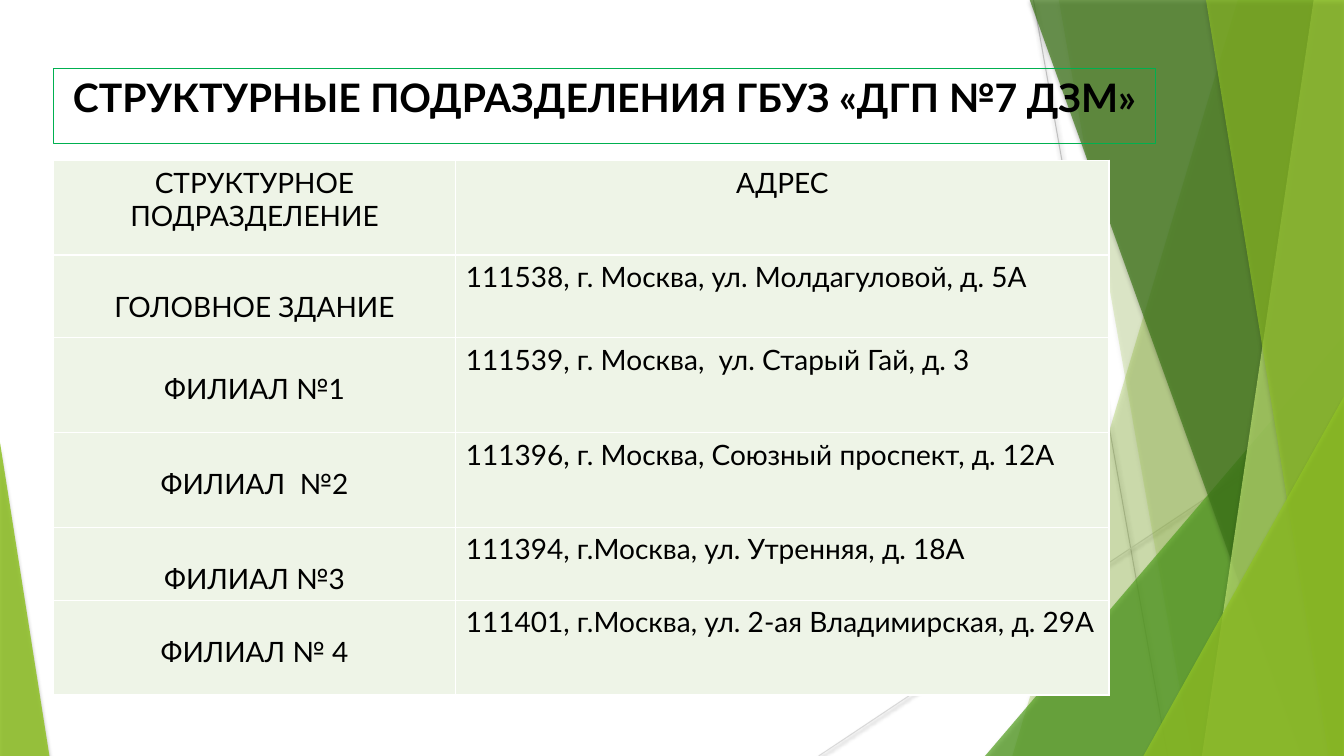
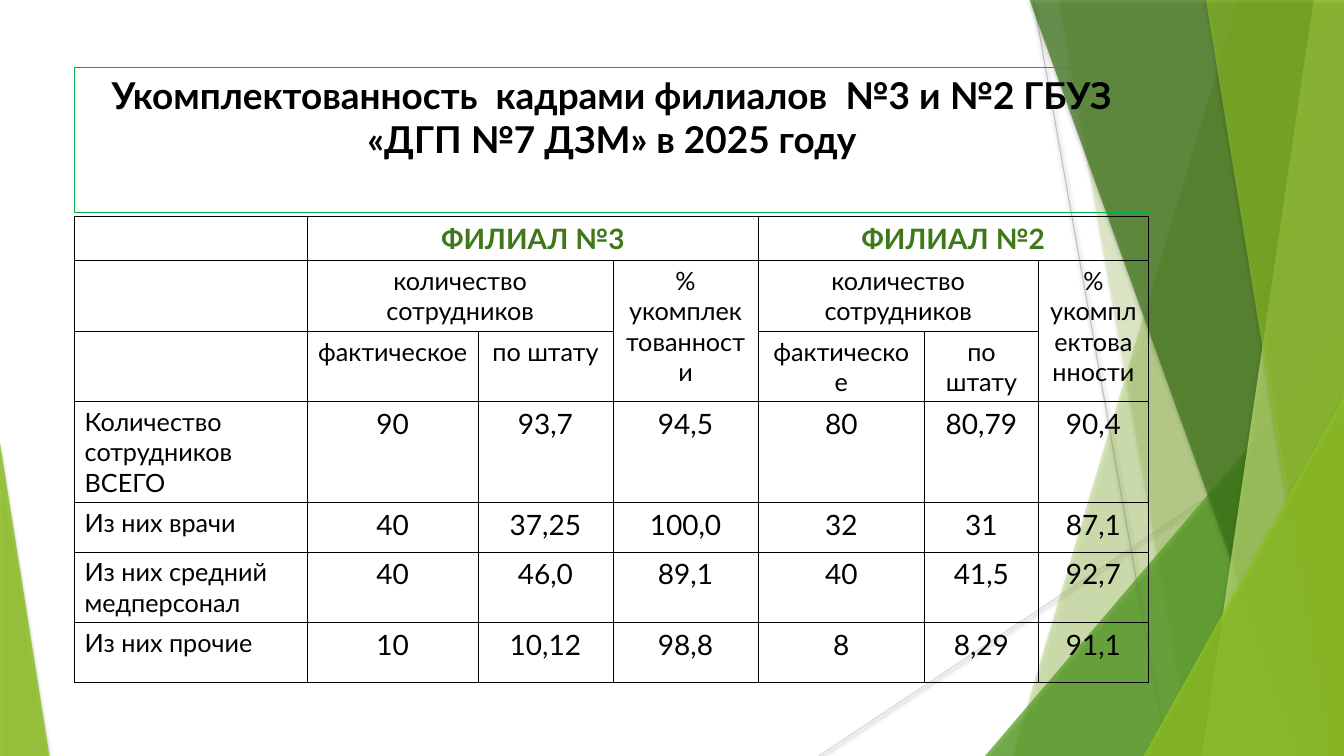
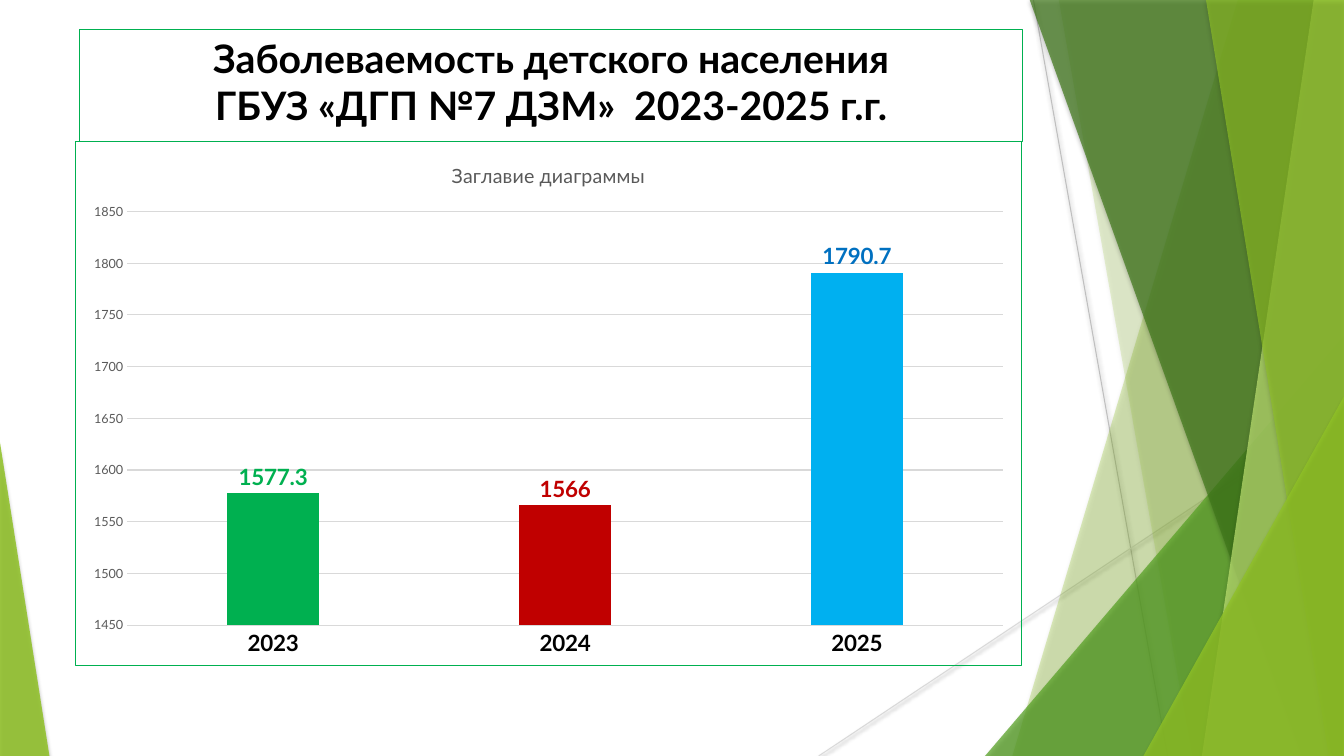
"""Build three slides about a children's clinic: branches, staffing and illness rates."""
from dataclasses import dataclass
from typing import Any, Callable, NamedTuple

from lxml import etree
from pptx import Presentation
from pptx.chart.data import CategoryChartData
from pptx.dml.color import RGBColor
from pptx.enum.chart import XL_CHART_TYPE, XL_LABEL_POSITION, XL_TICK_MARK
from pptx.enum.shapes import MSO_CONNECTOR, MSO_SHAPE
from pptx.enum.text import MSO_ANCHOR, PP_ALIGN
from pptx.oxml.ns import qn
from pptx.util import Inches, Pt

COLUMN = XL_CHART_TYPE.COLUMN_CLUSTERED
ABOVE = XL_LABEL_POSITION.OUTSIDE_END
NO_TICK = XL_TICK_MARK.NONE
STRAIGHT = MSO_CONNECTOR.STRAIGHT
RECT = MSO_SHAPE.RECTANGLE
TRIANGLE = MSO_SHAPE.ISOSCELES_TRIANGLE
TOP = MSO_ANCHOR.TOP
CENTER = PP_ALIGN.CENTER
LEFT = PP_ALIGN.LEFT


@dataclass(frozen=True)
class Theme:
    """Hold the colours, type sizes and font of the deck."""
    font: str = "Lato"
    black: str = "000000"
    white: str = "FFFFFF"
    gray: str = "595959"
    rule: str = "D9D9D9"
    ray: str = "BFBFBF"
    frame: str = "00B050"
    red: str = "C00000"
    sky: str = "00B0F0"
    blue: str = "0070C0"
    lime: str = "90C226"
    pale: str = "C0E474"
    green: str = "54A021"
    forest: str = "3F7819"
    mint: str = "EEF4E7"
    title: float = 28
    tight: float = 26.4
    body: float = 20
    small: float = 18
    label: float = 16
    legend: float = 14
    tick: float = 9


THEME = Theme()
WIDE, HIGH, EDGE = 13.33, 7.5, -0.01


class Box(NamedTuple):
    """Place a shape, in inches."""
    left: float
    top: float
    width: float
    height: float


class Ray(NamedTuple):
    """Describe a thin line of the backdrop."""
    start: tuple[float, float]
    end: tuple[float, float]
    color: str


class Band(NamedTuple):
    """Describe a full-height band that reaches the right edge."""
    upper: float
    lower: float
    color: str
    alpha: int


class Wedge(NamedTuple):
    """Describe a corner triangle; peak is 0 for left and 1 for right."""
    box: Box
    peak: float
    color: str
    alpha: int


class Look(NamedTuple):
    """Describe the text of one table cell."""
    size: float = THEME.body
    color: str = THEME.black
    bold: bool = False
    align: Any = CENTER
    inset: float = 0.05


class Bar(NamedTuple):
    """Describe one column of the chart."""
    year: str
    value: float
    fill: str
    text: str


@dataclass(frozen=True)
class Grid:
    """Describe a table and the rule for its cells."""
    box: Box
    cols: tuple[float, ...]
    rows: tuple[float, ...]
    texts: tuple[tuple[str, ...], ...]
    look: Callable[[int, int], Look]
    line: str
    weight: float
    fill: str = ""
    spans: tuple[tuple[int, int, int, int], ...] = ()


RAYS = (
    Ray((10.25, 0), (11.58, HIGH), THEME.ray),
    Ray((WIDE, 4.03), (8.12, HIGH), THEME.rule),
)
DECOR = (
    Band(12.28, 10.04, THEME.lime, 30),
    Band(10.5, 11.82, THEME.lime, 20),
    Wedge(Box(9.77, 3.33, 3.56, 4.17), 1, THEME.green, 72),
    Band(10.21, 12.91, THEME.forest, 70),
    Band(13.03, 11.92, THEME.pale, 70),
    Band(11.96, 13.18, THEME.lime, 65),
    Wedge(Box(11.34, 3.93, 1.99, 3.57), 1, THEME.lime, 80),
    Wedge(Box(0, 4.39, 0.49, 3.11), 0, THEME.lime, 85),
)


def branch_look(row: int, col: int) -> Look:
    """Centre the heads and names, and set names lower than addresses."""
    if row and col:
        return Look(align=LEFT)
    return Look(inset=0.34 if row else 0.05)


def staff_look(row: int, col: int) -> Look:
    """Choose the text style by the part of the staff table."""
    if row == 0:
        return Look(color=THEME.forest, bold=True)
    if row < 3:
        return Look(size=THEME.small)
    return Look() if col else Look(size=THEME.small, align=LEFT)


COUNT, SHARE = "количество сотрудников", "% укомплектованности"
FACT, PLAN = "фактическое", "по штату"

BRANCHES = Grid(
    Box(0.53, 1.59, 10.47, 5.24),
    (3.99, 6.48),
    (0.94, 0.82, 0.94, 0.94, 0.65, 0.94),
    (
        ("СТРУКТУРНОЕ ПОДРАЗДЕЛЕНИЕ", "АДРЕС"),
        ("ГОЛОВНОЕ ЗДАНИЕ", "111538, г. Москва, ул. Молдагуловой, д. 5А"),
        ("ФИЛИАЛ №1", "111539, г. Москва,  ул. Старый Гай, д. 3"),
        ("ФИЛИАЛ  №2", "111396, г. Москва, Союзный проспект, д. 12А"),
        ("ФИЛИАЛ №3", "111394, г.Москва, ул. Утренняя, д. 18А"),
        ("ФИЛИАЛ № 4", "111401, г.Москва, ул. 2-ая Владимирская, д. 29А"),
    ),
    branch_look, THEME.white, 0.96, THEME.mint,
)
STAFF = Grid(
    Box(0.74, 2.15, 10.66, 4.32),
    (2.31, 1.69, 1.34, 1.44, 1.65, 1.13, 1.09),
    (0.33, 0.69, 0.69, 0.88, 0.49, 0.66, 0.59),
    (
        ("", "ФИЛИАЛ №3", "", "", "ФИЛИАЛ №2", "", ""),
        ("", COUNT, "", SHARE, COUNT, "", SHARE),
        ("", FACT, PLAN, "", FACT, PLAN, ""),
        ("Количество сотрудников ВСЕГО", "90", "93,7", "94,5", "80", "80,79", "90,4"),
        ("Из них врачи", "40", "37,25", "100,0", "32", "31", "87,1"),
        ("Из них средний медперсонал", "40", "46,0", "89,1", "40", "41,5", "92,7"),
        ("Из них прочие", "10", "10,12", "98,8", "8", "8,29", "91,1"),
    ),
    staff_look, THEME.black, 0.5,
    spans=tuple(
        span for col in (1, 4)
        for span in ((0, col, 0, col + 2), (1, col, 1, col + 1), (1, col + 2, 2, col + 2))
    ),
)
BARS = (
    Bar("2023", 1577.3, THEME.frame, THEME.frame),
    Bar("2024", 1566, THEME.red, THEME.red),
    Bar("2025", 1790.7, THEME.sky, THEME.blue),
)


def assign(item: Any, values: dict[str, Any]) -> None:
    """Set each named attribute of an object."""
    for name, value in values.items():
        setattr(item, name, value)


def rgb(code: str) -> RGBColor:
    """Turn a hex code into a colour."""
    return RGBColor.from_string(code)


def place(box: Box) -> list[int]:
    """Turn a box into lengths."""
    return [Inches(side) for side in box]


def ink(font: Any, size: float, color: str, bold: bool = False) -> None:
    """Style a font."""
    assign(font, {"name": THEME.font, "size": Pt(size), "bold": bold})
    font.color.rgb = rgb(color)


def paint(fill: Any, color: str) -> None:
    """Give a solid fill."""
    fill.solid()
    fill.fore_color.rgb = rgb(color)


def node(parent: Any, tag: str, **attrs: Any) -> Any:
    """Add an XML child."""
    return etree.SubElement(parent, qn(tag), {key: str(val) for key, val in attrs.items()})


def stroke(parent: Any, tag: str, color: str, weight: float) -> None:
    """Add a solid line element."""
    line = node(parent, tag, w=Pt(weight))
    node(node(line, "a:solidFill"), "a:srgbClr", val=color)


def shade(shape: Any, alpha: int, blur: float, drop: float) -> None:
    """Add a soft shadow that falls straight down."""
    effect = node(shape._element.spPr, "a:effectLst")
    cast = node(effect, "a:outerShdw", blurRad=Pt(blur), dist=Pt(drop),
                dir=5400000, algn="ctr", rotWithShape=0)
    node(node(cast, "a:srgbClr", val=THEME.black), "a:alpha", val=alpha * 1000)


def outline(slide: Any, part: Band | Wedge) -> Any:
    """Draw the bare outline of a band or a wedge."""
    if isinstance(part, Wedge):
        shape = slide.shapes.add_shape(TRIANGLE, *place(part.box))
        shape.adjustments[0] = part.peak
        return shape
    first, *rest = [
        (Inches(x), Inches(y)) for x, y in
        ((part.upper, EDGE), (WIDE, EDGE), (WIDE, HIGH), (part.lower, HIGH))
    ]
    form = slide.shapes.build_freeform(*first)
    form.add_line_segments(rest, close=True)
    return form.convert_to_shape()


def draw_decor(slide: Any) -> None:
    """Draw the shared backdrop."""
    for ray in RAYS:
        ends = [Inches(value) for value in ray.start + ray.end]
        line = slide.shapes.add_connector(STRAIGHT, *ends)
        line.line.color.rgb = rgb(ray.color)
        line.line.width = Pt(0.75)
        shade(line, 38, 3.1, 1.6)
    for part in DECOR:
        shape = outline(slide, part)
        paint(shape.fill, part.color)
        tint = shape._element.spPr.find(".//" + qn("a:srgbClr"))
        node(tint, "a:alpha", val=part.alpha * 1000)
        shape.line.fill.background()
        shade(shape, 35, 3, 2)


def draw_title(slide: Any, box: Box, text: str, size: float = THEME.title) -> None:
    """Draw the framed title."""
    shape = slide.shapes.add_shape(RECT, *place(box))
    shape.shadow.inherit = False
    shape.fill.background()
    shape.line.color.rgb = rgb(THEME.frame)
    shape.line.width = Pt(0)
    frame = shape.text_frame
    assign(frame, {"word_wrap": True, "vertical_anchor": TOP})
    para = frame.paragraphs[0]
    para.text = text
    para.alignment = CENTER
    ink(para.font, size, THEME.black, True)


def draw_cell(cell: Any, text: str, grid: Grid, look: Look) -> None:
    """Fill one cell with its text, borders and colour."""
    para = cell.text_frame.paragraphs[0]
    para.text = text
    para.alignment = look.align
    ink(para.font, look.size, look.color, look.bold)
    assign(cell, {"margin_top": Inches(look.inset), "vertical_anchor": TOP})
    for side in "LRTB":
        stroke(cell._tc.get_or_add_tcPr(), f"a:ln{side}", grid.line, grid.weight)
    if grid.fill:
        paint(cell.fill, grid.fill)
    else:
        cell.fill.background()


def draw_grid(slide: Any, grid: Grid) -> None:
    """Draw a table."""
    table = slide.shapes.add_table(len(grid.rows), len(grid.cols), *place(grid.box)).table
    assign(table, {"first_row": False, "horz_banding": False})
    for col, width in zip(table.columns, grid.cols):
        col.width = Inches(width)
    for row, height in zip(table.rows, grid.rows):
        row.height = Inches(height)
    for y, texts in enumerate(grid.texts):
        for x, text in enumerate(texts):
            draw_cell(table.cell(y, x), text, grid, grid.look(y, x))
    for top, left, low, right in grid.spans:
        table.cell(top, left).merge(table.cell(low, right))


def draw_chart(slide: Any, box: Box) -> None:
    """Draw the column chart of illness rates."""
    data = CategoryChartData()
    data.categories = [bar.year for bar in BARS]
    data.add_series("Series 1", [bar.value for bar in BARS])
    chart = slide.shapes.add_chart(COLUMN, *place(box), data).chart
    ink(chart.font, 10, THEME.black)
    assign(chart, {"has_legend": False, "has_title": True})
    para = chart.chart_title.text_frame.paragraphs[0]
    para.text = "Заглавие диаграммы"
    ink(para.font, THEME.legend, THEME.gray)

    years, rates = chart.category_axis, chart.value_axis
    for axis in (years, rates):
        assign(axis, {"major_tick_mark": NO_TICK, "minor_tick_mark": NO_TICK})
    assign(rates, {"minimum_scale": 1450, "maximum_scale": 1850, "major_unit": 50})
    ink(years.tick_labels.font, THEME.label, THEME.black, True)
    ink(rates.tick_labels.font, THEME.tick, THEME.gray)
    rates.format.line.fill.background()
    for item in (years, rates.major_gridlines):
        item.format.line.color.rgb = rgb(THEME.rule)
        item.format.line.width = Pt(0.75)

    plot = chart.plots[0]
    assign(plot, {"gap_width": 219, "overlap": -27, "vary_by_categories": False})
    for spot, bar in enumerate(BARS):
        point = plot.series[0].points[spot]
        paint(point.format.fill, bar.fill)
        ink(point.data_label.font, THEME.label, bar.text, True)
        point.data_label.position = ABOVE

    space = chart._chartSpace
    props = node(space, "c:spPr")
    node(props, "a:noFill")
    stroke(props, "a:ln", THEME.frame, 0.75)
    space.find(qn("c:chart")).addnext(props)


def main() -> None:
    """Build and save the deck."""
    deck = Presentation()
    assign(deck, {"slide_width": Inches(WIDE), "slide_height": Inches(HIGH)})
    places, staff, rates = [deck.slides.add_slide(deck.slide_layouts[6]) for _ in range(3)]
    for slide in (places, staff, rates):
        draw_decor(slide)

    draw_title(places, Box(0.53, 0.68, 10.93, 0.74),
               "СТРУКТУРНЫЕ ПОДРАЗДЕЛЕНИЯ ГБУЗ «ДГП №7 ДЗМ»")
    draw_grid(places, BRANCHES)

    draw_title(staff, Box(0.74, 0.67, 10.66, 1.44),
               "Укомплектованность  кадрами филиалов  №3 и №2 ГБУЗ «ДГП №7 ДЗМ» в 2025 году",
               THEME.tight)
    draw_grid(staff, STAFF)

    draw_title(rates, Box(0.79, 0.29, 9.35, 1.11),
               "Заболеваемость детского населения\vГБУЗ «ДГП №7 ДЗМ»  2023-2025 г.г.")
    draw_chart(rates, Box(0.74, 1.4, 9.4, 5.21))
    deck.save("out.pptx")


if __name__ == "__main__":
    main()
